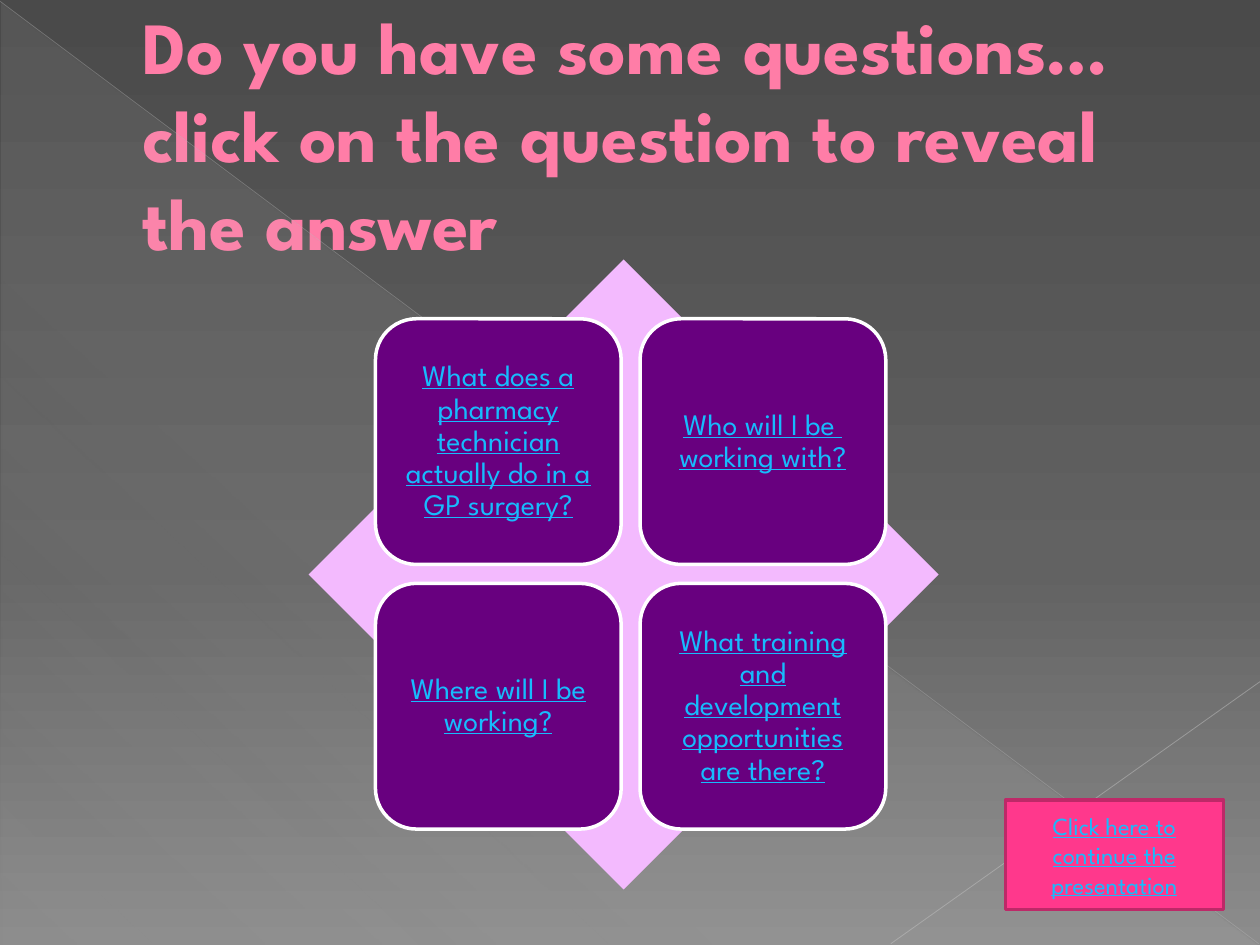
from lxml import etree
from pptx import Presentation
from pptx.dml.color import RGBColor as Rgb
from pptx.enum.shapes import MSO_CONNECTOR as Line, MSO_SHAPE as Shape
from pptx.enum.text import MSO_ANCHOR as Anchor, MSO_AUTO_SIZE as Fit, PP_ALIGN as Align
from pptx.oxml import parse_xml
from pptx.oxml.ns import nsdecls, qn
from pptx.util import Inches, Pt

WIDE, HIGH = 10, 7.5
FONT = "League Spartan"
COLORS = {
    "title": "FF7DA7", "edge": "B12761", "link": "17BBFD",
    "diamond": "F3BAFE", "card": "68007F", "white": "FFFFFF",
    "button": "FF388C", "rim": "BD2968",
    "shade": "D2D2D2", "long": "BFBFBF", "short": "C6C6C6",
}
BACK = [(0, "4A4A4A", 100), (60, "626262", 100), (100, "8C8C8C", 100)]
SHADE = [(0, COLORS["shade"], 10), (70, COLORS["shade"], 8), (100, COLORS["shade"], 1)]
CARDS = [
    "What does a pharmacy technician actually do in a GP surgery?",
    "Who will I be  working with?",
    "Where will I be working?",
    "What training and development opportunities are there?",
]


def color(name):
    return Rgb.from_string(COLORS[name])


def blend(stops, angle):
    """Gradient fill from (position, color, opacity) stops, clockwise angle."""
    marks = "".join(
        f'<a:gs pos="{pos * 1000}"><a:srgbClr val="{tint}">'
        f'<a:alpha val="{alpha * 1000}"/></a:srgbClr></a:gs>'
        for pos, tint, alpha in stops)
    return parse_xml(
        f'<a:gradFill {nsdecls("a")} rotWithShape="1"><a:gsLst>{marks}</a:gsLst>'
        f'<a:lin ang="{angle * 60000}" scaled="0"/></a:gradFill>')


def write(frame, text, size, tint, bold=False, under=False,
          align=Align.CENTER, inset=None, space=None, after=None):
    frame.word_wrap = True
    frame.auto_size = Fit.NONE
    frame.vertical_anchor = Anchor.MIDDLE
    if inset is not None:
        frame.margin_left = frame.margin_right = Inches(inset)
        frame.margin_top = frame.margin_bottom = Inches(inset)
    par = frame.paragraphs[0]
    par.alignment = align
    if space:
        par.line_spacing = space
    if after:
        par.space_after = Pt(after)
    run = par.add_run()
    run.text = text
    font = run.font
    font.name, font.size = FONT, Pt(size)
    font.bold, font.underline = bold, under
    font.color.rgb = color(tint)
    return par, run


def block(slide, kind, left, top, wide, high, fill=None, line=None):
    shape = slide.shapes.add_shape(
        kind, Inches(left), Inches(top), Inches(wide), Inches(high))
    shape.shadow.inherit = False
    if fill:
        shape.fill.solid()
        shape.fill.fore_color.rgb = color(fill)
    if line:
        shape.line.color.rgb = color(line)
        shape.line.width = Pt(2)
    else:
        shape.line.fill.background()
    return shape


def ray(slide, start, end, tint, width, alpha):
    line = slide.shapes.add_connector(
        Line.STRAIGHT, *(Inches(n) for n in (*start, *end)))
    line.line.color.rgb = color(tint)
    line.line.width = Pt(width)
    props = line._element.spPr
    mark = props.find(".//" + qn("a:srgbClr"))
    etree.SubElement(mark, qn("a:alpha")).set("val", str(alpha * 1000))
    etree.SubElement(props, qn("a:effectLst"))


def backdrop(slide):
    fill = slide.background.fill
    fill.solid()
    props = slide._element.cSld.find(".//" + qn("p:bgPr"))
    props.replace(props.find(qn("a:solidFill")), blend(BACK, 90))

    # Faint corner shade and the two crossing lines
    shade = block(slide, Shape.RIGHT_TRIANGLE, 0.01, 0.02, 9.98, 7.48, "shade")
    props = shade._element.spPr
    props.replace(props.find(qn("a:solidFill")), blend(SHADE, 133))
    ray(slide, (0, 0.01), (9.99, 7.49), "long", 0.39, 35)
    ray(slide, (WIDE, 5.41), (7.07, 7.49), "short", 0.47, 45)


def heading(slide, text):
    title = slide.shapes.title
    title.left, title.top = Inches(0.5), Inches(0.29)
    title.width, title.height = Inches(9.21), Inches(1.53)
    par, run = write(title.text_frame, text, 42, "title", bold=True, align=Align.LEFT)
    props = par._p.get_or_add_pPr()
    props.set("marL", str(Inches(0.53)))
    props.set("indent", "0")
    run._r.get_or_add_rPr().insert(0, parse_xml(
        f'<a:ln {nsdecls("a")} w="{Pt(0.5)}"><a:solidFill>'
        f'<a:srgbClr val="{COLORS["edge"]}"/></a:solidFill></a:ln>'))


def matrix(slide, left, top, side, step):
    """Two by two grid of question cards."""
    for spot, text in enumerate(CARDS):
        row, col = divmod(spot, 2)
        card = block(slide, Shape.ROUNDED_RECTANGLE, left + col * step,
                     top + row * step, side, side, "card", "white")
        write(card.text_frame, text, 17, "link", under=True,
              inset=0.07, space=0.9, after=6)


def main():
    deck = Presentation()
    deck.slide_width, deck.slide_height = Inches(WIDE), Inches(HIGH)
    slide = deck.slides.add_slide(deck.slide_layouts[5])

    backdrop(slide)
    heading(slide, "Do you have some questions…click on the question to reveal the answer")

    # Diamond behind the questions
    block(slide, Shape.DIAMOND, 2.45, 2.06, 5, 5, "diamond")
    matrix(slide, 2.98, 2.53, 1.95, 2.1)

    # Continue button
    button = block(slide, Shape.RECTANGLE, 7.98, 6.35, 1.73, 0.87, "button", "rim")
    write(button.text_frame, "Click here to continue the presentation",
          14, "link", under=True)
    deck.save("out.pptx")


if __name__ == "__main__":
    main()
